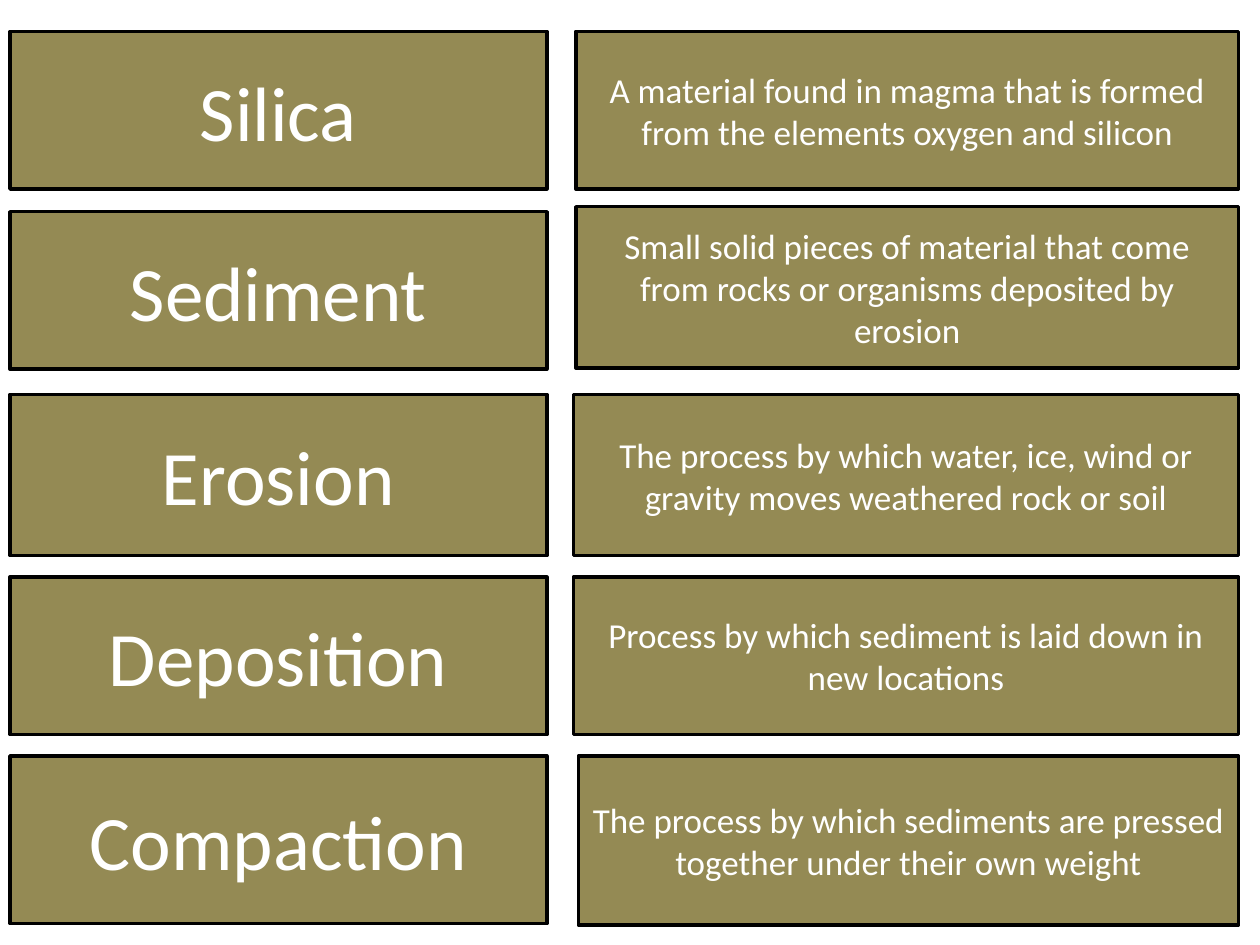
from pptx import Presentation
from pptx.dml.color import RGBColor
from pptx.enum.shapes import MSO_SHAPE
from pptx.enum.text import MSO_ANCHOR, PP_ALIGN
from pptx.util import Inches, Pt

PROCESS = MSO_SHAPE.FLOWCHART_PROCESS
MIDDLE = MSO_ANCHOR.MIDDLE
CENTER = PP_ALIGN.CENTER
BLANK_LAYOUT = 6

FILL, OUTLINE, TEXT = "948A54", "000000", "FFFFFF"
TERM_SIZE, DEFINITION_SIZE = 44, 20
TERM_LEFT, TERM_WIDTH = 0.08, 4.26
DEFINITION_RIGHT = 9.83

# Term, its (top, height), definition, its (left, top, height)
ROWS = [
    ("Silica", (0.25, 1.25),
     "A material found in magma that is formed from the elements oxygen and silicon",
     (4.57, 0.25, 1.25)),
    ("Sediment", (1.68, 1.25),
     "Small solid pieces of material that come from rocks or organisms deposited by erosion",
     (4.57, 1.64, 1.28)),
    ("Erosion", (3.13, 1.28),
     "The process by which water, ice, wind or gravity moves weathered rock or soil",
     (4.55, 3.13, 1.28)),
    ("Deposition", (4.58, 1.25),
     "Process by which sediment is laid down in new locations",
     (4.55, 4.58, 1.25)),
    ("Compaction", (6, 1.33),
     "The process by which sediments are pressed together under their own weight",
     (4.59, 6, 1.34)),
]


def color(hex_value):
    return RGBColor.from_string(hex_value)


def set_attributes(target, values):
    for name, value in values.items():
        setattr(target, name, value)


def add_card(slide, text, left, top, width, height, size):
    """Add an outlined box with centred text."""
    shape = slide.shapes.add_shape(
        PROCESS, Inches(left), Inches(top), Inches(width), Inches(height))
    shape.shadow.inherit = False
    shape.fill.solid()
    shape.fill.fore_color.rgb = color(FILL)
    shape.line.color.rgb = color(OUTLINE)
    shape.line.width = Pt(2)

    frame = shape.text_frame
    set_attributes(frame, {"word_wrap": True, "vertical_anchor": MIDDLE})
    paragraph = frame.paragraphs[0]
    paragraph.alignment = CENTER
    run = paragraph.add_run()
    run.text = text
    set_attributes(run.font, {"name": "Calibri", "size": Pt(size)})
    run.font.color.rgb = color(TEXT)


def main():
    presentation = Presentation()
    set_attributes(presentation, {"slide_width": Inches(10), "slide_height": Inches(7.5)})
    slide = presentation.slides.add_slide(presentation.slide_layouts[BLANK_LAYOUT])

    # Terms on the left, definitions on the right
    for term, (term_top, term_height), definition, (left, top, height) in ROWS:
        add_card(slide, term, TERM_LEFT, term_top, TERM_WIDTH, term_height, TERM_SIZE)
        add_card(slide, definition, left, top, DEFINITION_RIGHT - left, height,
                 DEFINITION_SIZE)

    presentation.save("out.pptx")


if __name__ == "__main__":
    main()
